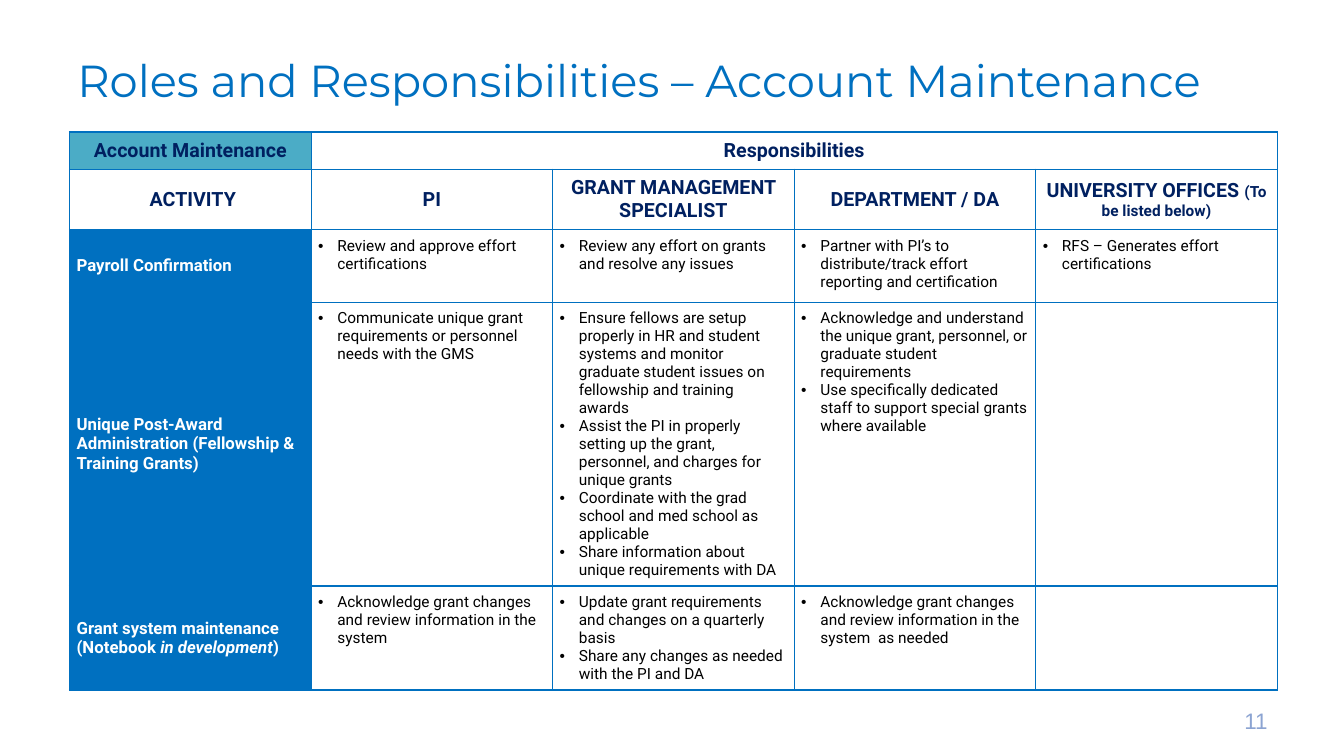
from pptx import Presentation
from pptx.dml.color import RGBColor
from pptx.enum.text import MSO_ANCHOR as ANCHOR, MSO_AUTO_SIZE as AUTO, PP_ALIGN as ALIGN
from pptx.oxml.ns import qn
from pptx.util import Inches, Pt
from lxml.etree import SubElement

SLIDE_W, SLIDE_H = 13.33, 7.5
COLORS = {"blue": "0070C0", "navy": "002060", "teal": "4BACC6",
          "white": "FFFFFF", "black": "000000", "number": "8CA4D2"}
COLUMNS = 5
ROW_HEIGHTS = [0.37, 0.6, 0.72, 2.8, 1.02]
PAD = Inches(0.07)
BULLET_INDENT = Inches(0.19)

HEADINGS = [
    [(" ACTIVITY", 14)],
    [("PI", 14)],
    [("GRANT MANAGEMENT SPECIALIST", 14)],
    [("DEPARTMENT / DA", 14)],
    [("UNIVERSITY OFFICES ", 14), ("(To be listed below)", 11)],
]
ACTIVITIES = [
    ([[("Payroll Confirmation", False)]],
     [["Review and approve effort certifications"],
      ["Review any effort on grants and resolve any issues"],
      ["Partner with PI’s to distribute/track effort reporting and certification"],
      ["RFS – Generates effort certifications"]]),
    ([[("Unique Post-Award Administration (Fellowship & Training Grants)", False)]],
     [["Communicate unique grant requirements or personnel needs with the GMS"],
      ["Ensure fellows are setup properly in HR and student systems and monitor "
       "graduate student issues on fellowship and training awards",
       "Assist the PI in properly setting up the grant, personnel, and charges for unique grants",
       "Coordinate with the grad school and med school as applicable",
       "Share information about unique requirements with DA"],
      ["Acknowledge and understand the unique grant, personnel, or graduate student requirements",
       "Use specifically dedicated staff to support special grants where available"],
      []]),
    ([[("Grant system maintenance", False)],
      [("(Notebook ", False), ("in development", True), (")", False)]],
     [["Acknowledge grant changes and review information in the system"],
      ["Update grant requirements and changes on a quarterly basis",
       "Share any changes as needed with the PI and DA"],
      ["Acknowledge grant changes and review information in the system  as needed"],
      []]),
]


def rgb(name):
    return RGBColor.from_string(COLORS[name])


def add_run(p, text, size, color, font="Roboto", bold=False, italic=False):
    r = p.add_run()
    r.text = text
    r.font.name, r.font.size = font, Pt(size)
    r.font.bold, r.font.italic = bold, italic
    r.font.color.rgb = rgb(color)


def paragraphs(tf, count):
    for i in range(count):
        yield tf.paragraphs[0] if i == 0 else tf.add_paragraph()


def add_bullet(p):
    pPr = p._p.get_or_add_pPr()
    pPr.set("marL", str(BULLET_INDENT))
    pPr.set("indent", str(-BULLET_INDENT))
    SubElement(pPr, qn("a:buFont"), typeface="Arial")
    SubElement(pPr, qn("a:buChar"), char="•")


def format_cell(cell, fill=None, anchor=ANCHOR.MIDDLE):
    cell.margin_left = cell.margin_right = cell.margin_top = cell.margin_bottom = PAD
    cell.vertical_anchor = anchor
    tcPr = cell._tc.get_or_add_tcPr()
    for side in ("a:lnL", "a:lnR", "a:lnT", "a:lnB"):
        ln = SubElement(tcPr, qn(side), w=str(Pt(1)))
        SubElement(SubElement(ln, qn("a:solidFill")), qn("a:srgbClr"), val=COLORS["blue"])
    if fill:
        cell.fill.solid()
        cell.fill.fore_color.rgb = rgb(fill)
    else:
        cell.fill.background()


def fill_heading(cell, runs, fill=None):
    format_cell(cell, fill)
    p = cell.text_frame.paragraphs[0]
    p.alignment = ALIGN.CENTER
    for text, size in runs:
        add_run(p, text, size, "navy", bold=True)


def fill_activity(cell, lines):
    format_cell(cell, "blue")
    for p, line in zip(paragraphs(cell.text_frame, len(lines)), lines):
        for text, italic in line:
            add_run(p, text, 12, "white", bold=True, italic=italic)


def fill_duties(cell, duties):
    format_cell(cell, "white", ANCHOR.TOP)
    for p, duty in zip(paragraphs(cell.text_frame, len(duties)), duties):
        add_bullet(p)
        add_run(p, duty, 11, "black")


def add_title(slide, x, y, w, h):
    sp = slide.shapes.title
    sp.left, sp.top, sp.width, sp.height = map(Inches, (x, y, w, h))
    tf = sp.text_frame
    tf.auto_size, tf.vertical_anchor, tf.word_wrap = AUTO.NONE, ANCHOR.TOP, True
    p = tf.paragraphs[0]
    p.alignment, p.line_spacing = ALIGN.LEFT, Pt(47.2)
    add_run(p, "Roles and Responsibilities – Account Maintenance", 32, "blue", "Montserrat")


def add_roles_table(slide, x, y, w):
    box = map(Inches, (x, y, w, sum(ROW_HEIGHTS)))
    table = slide.shapes.add_table(len(ROW_HEIGHTS), COLUMNS, *box).table
    table.first_row = table.horz_banding = False
    for column in table.columns:
        column.width = Inches(w / COLUMNS)
    for row, height in zip(table.rows, ROW_HEIGHTS):
        row.height = Inches(height)
    table.cell(0, 1).merge(table.cell(0, COLUMNS - 1))
    fill_heading(table.cell(0, 0), [("Account Maintenance", 14)], "teal")
    fill_heading(table.cell(0, 1), [("Responsibilities", 14)])
    for c in range(2, COLUMNS):
        format_cell(table.cell(0, c))
    for c, runs in enumerate(HEADINGS):
        fill_heading(table.cell(1, c), runs)
    for r, (activity, roles) in enumerate(ACTIVITIES, 2):
        fill_activity(table.cell(r, 0), activity)
        for c, duties in enumerate(roles, 1):
            fill_duties(table.cell(r, c), duties)


def add_page_number(slide, x, y, w, h):
    tf = slide.shapes.add_textbox(*map(Inches, (x, y, w, h))).text_frame
    tf.word_wrap, tf.vertical_anchor = True, ANCHOR.MIDDLE
    p = tf.paragraphs[0]
    p.alignment = ALIGN.RIGHT
    add_run(p, "11", 16, "number", "Arial")


def main():
    prs = Presentation()
    prs.slide_width, prs.slide_height = Inches(SLIDE_W), Inches(SLIDE_H)
    slide = prs.slides.add_slide(prs.slide_layouts[5])
    add_title(slide, 0.05 * SLIDE_W, 0.35, 13.13, 0.73)
    add_roles_table(slide, 0.69, 1.31, 11.98)
    add_page_number(slide, 9.56, 6.95, 3.11, 0.4)
    prs.save("out.pptx")


if __name__ == "__main__":
    main()
